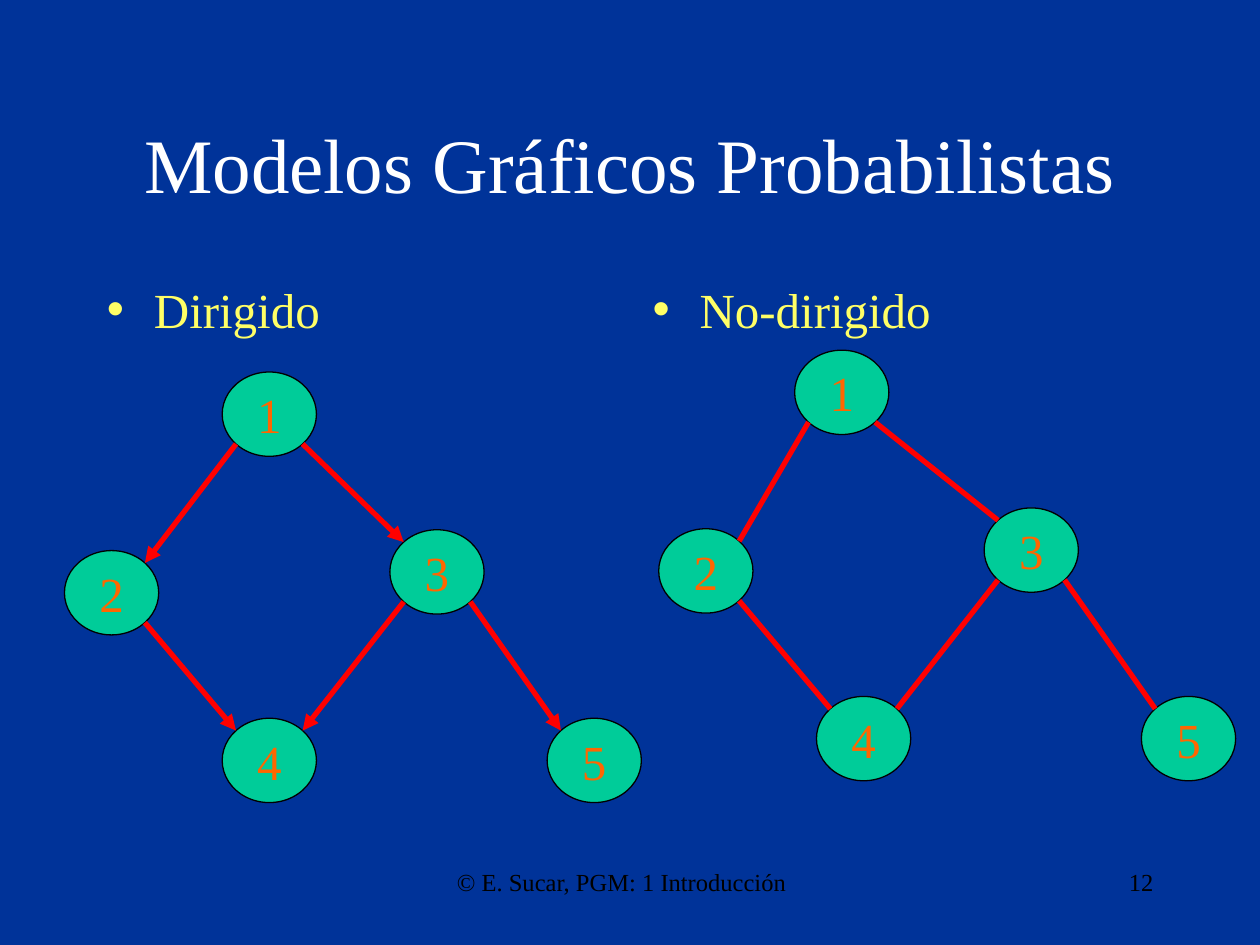
import math
import pptx
import pptx.util
import pptx.dml.color
import pptx.enum.shapes
import pptx.enum.text
import pptx.oxml
import pptx.oxml.ns

Cm, Pt = pptx.util.Cm, pptx.util.Pt
RGB = pptx.dml.color.RGBColor.from_string
ALIGN = pptx.enum.text.PP_ALIGN
ANCHOR = pptx.enum.text.MSO_ANCHOR

THEME = {
    "font": "Times New Roman",
    "background": "003399",
    "title": {"size": 44, "color": "FFFFFF"},
    "body": {"size": 28, "color": "FFFF66"},
    "node": {"size": 28, "color": "FF6600"},
    "footer": {"size": 14, "color": "000000"},
    "node_fill": "00CC99",
    "node_line": "000000",
    "edge": "FF0000",
}
NODE_W, NODE_H = 1.9, 1.7

# Node corners relative to the graph box, in cm
DIRECTED = {1: (3.18, 0), 2: (0, 3.6), 3: (6.56, 3.18), 4: (3.18, 6.98), 5: (9.73, 6.98)}
UNDIRECTED = {**DIRECTED, 1: (2.74, 0)}
EDGES = [(1, 2), (1, 3), (2, 4), (3, 4), (3, 5)]


def add_xml(parent, tag, **attrs):
    el = pptx.oxml.parse_xml(f"<a:{tag} {pptx.oxml.ns.nsdecls('a')}/>")
    for name, value in attrs.items():
        el.set(name, value)
    parent.append(el)


def write(sp, text, style, align, **frame):
    """Put one formatted paragraph in a shape."""
    tf = sp.text_frame
    for name, value in frame.items():
        setattr(tf, name, value)
    p = tf.paragraphs[0]
    p.alignment = align
    r = p.add_run()
    r.text = text
    for name, value in {"name": THEME["font"], "size": Pt(THEME[style]["size"])}.items():
        setattr(r.font, name, value)
    r.font.color.rgb = RGB(THEME[style]["color"])
    return p


def place(sp, box):
    for name, value in zip(("left", "top", "width", "height"), box):
        setattr(sp, name, Cm(value))


def add_title(slide, box, text):
    sp = slide.shapes.title
    place(sp, box)
    write(sp, text, "title", ALIGN.CENTER, vertical_anchor=ANCHOR.MIDDLE)


def add_bullet(slide, idx, box, text):
    sp = slide.placeholders[idx]
    place(sp, box)
    p = write(sp, text, "body", ALIGN.LEFT, vertical_anchor=ANCHOR.TOP)
    pPr = p._p.get_or_add_pPr()
    for name, value in {"marL": Cm(0.95), "indent": -Cm(0.95)}.items():
        pPr.set(name, str(value))
    add_xml(pPr, "buChar", char="•")


def add_footer(slide, box, text, align):
    sp = slide.shapes.add_textbox(*map(Cm, box))
    write(sp, text, "footer", align, word_wrap=True)


def add_node(slide, left, top, label):
    sp = slide.shapes.add_shape(pptx.enum.shapes.MSO_SHAPE.OVAL,
                                *map(Cm, (left, top, NODE_W, NODE_H)))
    sp.shadow.inherit = False
    sp.fill.solid()
    sp.fill.fore_color.rgb = RGB(THEME["node_fill"])
    sp.line.color.rgb = RGB(THEME["node_line"])
    sp.line.width = Pt(0.75)
    write(sp, label, "node", ALIGN.CENTER, word_wrap=False, vertical_anchor=ANCHOR.MIDDLE)


def add_edge(slide, parent, child, directed):
    """Join the lower diagonal of the parent to the upper diagonal of the child."""
    side = math.copysign(1, child[0] - parent[0])
    dx, dy = (d / 2 * math.sqrt(0.5) for d in (NODE_W, NODE_H))
    (x1, y1), (x2, y2) = ((x + NODE_W / 2, y + NODE_H / 2) for x, y in (parent, child))
    ends = (x1 + side * dx, y1 + dy, x2 - side * dx, y2 - dy)
    cxn = slide.shapes.add_connector(pptx.enum.shapes.MSO_CONNECTOR.STRAIGHT, *map(Cm, ends))
    cxn.line.color.rgb = RGB(THEME["edge"])
    cxn.line.width = Pt(3)
    if directed:
        add_xml(cxn.line._get_or_add_ln(), "tailEnd", type="triangle")
    add_xml(cxn._element.spPr, "effectLst")


def add_graph(slide, left, top, nodes, directed):
    spots = {n: (left + x, top + y) for n, (x, y) in nodes.items()}
    for n, spot in spots.items():
        add_node(slide, *spot, str(n))
    for a, b in EDGES:
        add_edge(slide, spots[a], spots[b], directed)


def main():
    prs = pptx.Presentation()
    prs.slide_width, prs.slide_height = Cm(25.4), Cm(19.05)
    slide = prs.slides.add_slide(prs.slide_layouts[3])
    slide.background.fill.solid()
    slide.background.fill.fore_color.rgb = RGB(THEME["background"])

    # Footer and slide number
    add_footer(slide, (7.62, 17.35, 9.95, 1.27), "© E. Sucar, PGM: 1 Introducción ", ALIGN.CENTER)
    add_footer(slide, (18.2, 17.35, 5.3, 1.27), "12", ALIGN.RIGHT)

    # Headings
    add_title(slide, (1.9, 1.7, 21.6, 3.17), "Modelos Gráficos Probabilistas")
    add_bullet(slide, 1, (1.9, 5.5, 10.6, 1.6), "Dirigido")
    add_bullet(slide, 2, (12.9, 5.5, 10.6, 1.6), "No-dirigido")

    # Graphs
    add_graph(slide, 1.3, 7.5, DIRECTED, True)
    add_graph(slide, 13.28, 7.06, UNDIRECTED, False)
    prs.save("out.pptx")


if __name__ == "__main__":
    main()
